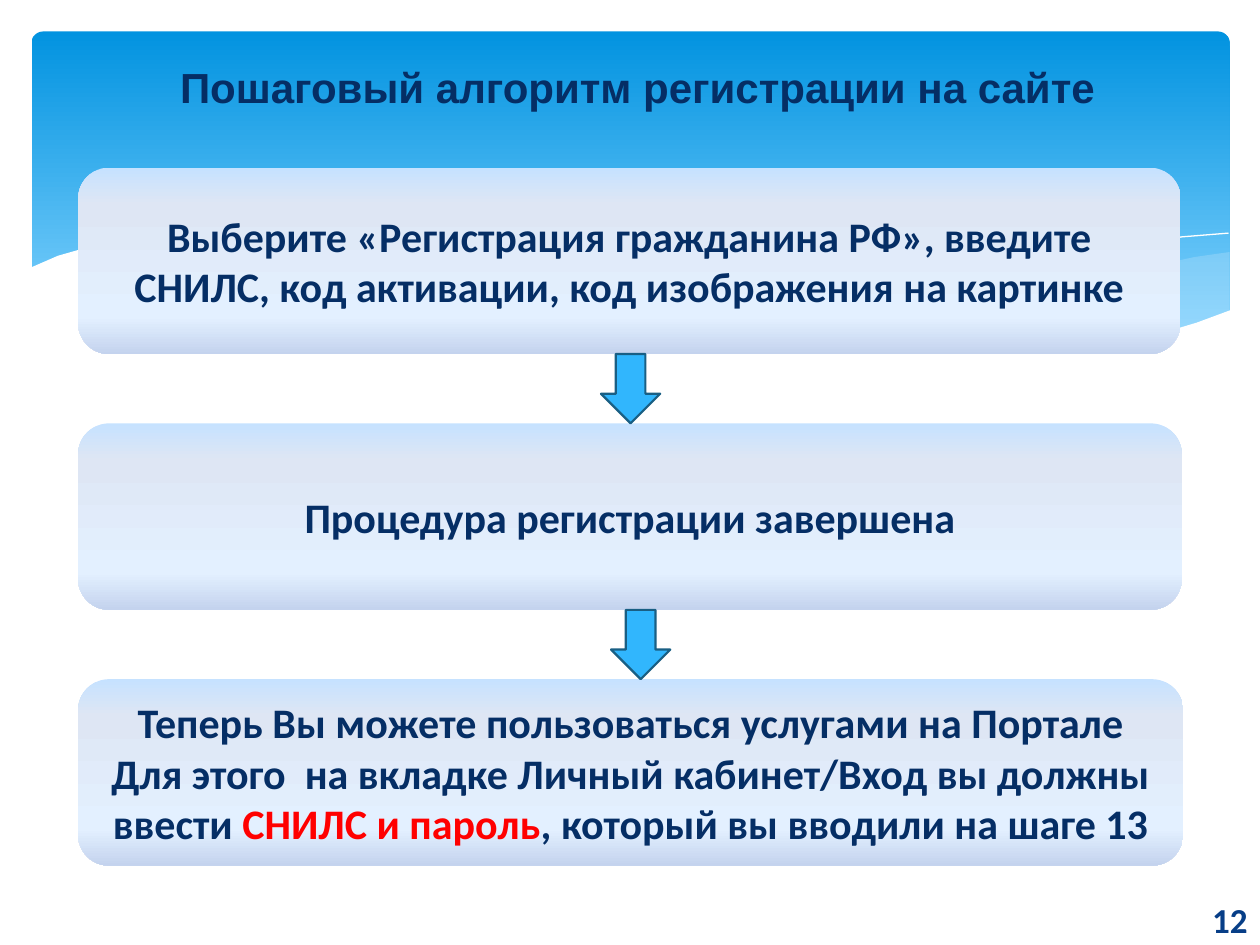
from lxml import etree
from pptx import Presentation
from pptx import util as u
from pptx.dml.color import RGBColor
from pptx.enum import shapes, text
from pptx.oxml import ns

COLORS = {
    "navy": "052E65", "blue": "073E87", "red": "FF0000", "white": "FFFFFF",
    "wave": "C6E7FC", "arrow": "31B6FD", "arrow_edge": "195F84",
}
BANNER_STOPS = [(0, "0293E0"), (90, "83D3FE")]
STEP_STOPS = [(0, "C6E2FF"), (20, "DEE6F4"), (80, "E3F0FF"), (100, "C4D3EE")]

RIGHT_WAVE = [
    (9.76, 2), (9.48, 2.04), (9.21, 2.1), (8.91, 2.16), (8.61, 2.23), (8.05, 2.37),
    (7.53, 2.48), (7.06, 2.57), (6.61, 2.65), (6.91, 2.69), (7.19, 2.72), (7.45, 2.75),
    (7.81, 2.77), (8.14, 2.78), (8.54, 2.76), (8.89, 2.72), (9.21, 2.65), (9.49, 2.57),
    (9.76, 2.47),
]
MIDDLE_WAVE = [
    (8.93, 2.73), (8.66, 2.69), (8.07, 2.6), (7.41, 2.47), (6.68, 2.31), (6.13, 2.18),
    (5.55, 2.05), (5.02, 1.96), (4.42, 1.89), (3.8, 1.85), (3.28, 1.87), (2.86, 1.91),
    (3.42, 1.99), (4.04, 2.11), (4.49, 2.22), (5.3, 2.4), (6.01, 2.55), (6.65, 2.66),
    (7.22, 2.74), (7.85, 2.78), (8.38, 2.78), (8.76, 2.75),
]
LONG_LINE = [
    (3.09, 1.95), (3.44, 1.9), (3.87, 1.87), (4.33, 1.87), (4.89, 1.9), (5.56, 1.97),
    (6.36, 2.08), (6.95, 2.19), (7.6, 2.33), (8.31, 2.51), (9.07, 2.72),
]
SHORT_LINE = [
    (6.13, 2.57), (6.72, 2.41), (7.48, 2.23), (8.06, 2.1), (8.66, 1.99), (9.1, 1.92),
    (9.38, 1.88), (9.75, 1.85),
]
WHITE_WAVE = [
    (9.77, 2.46), (9.5, 2.56), (9.2, 2.65), (8.87, 2.71), (8.5, 2.75), (8.09, 2.77),
    (7.61, 2.75), (7.08, 2.7), (6.48, 2.62), (5.79, 2.5), (5.03, 2.33), (4.47, 2.2),
    (3.91, 2.07), (3.4, 1.97), (2.92, 1.9), (2.5, 1.86), (2.11, 1.84), (1.77, 1.84),
    (1.46, 1.85), (1.19, 1.87), (0.95, 1.91), (0.67, 1.97), (0.46, 2.03), (0.23, 2.13),
    (0.23, 3.29), (9.77, 3.29),
]

STEP_LEFT, STEP_TOP, STEP_HEIGHT, STEP_PITCH = 0.62, 1.33, 1.48, 2.03
STEPS = [
    (8.75, [[("Выберите «Регистрация гражданина РФ», введите СНИЛС, "
              "код активации, код изображения на картинке", "navy")]]),
    (8.76, [[("Процедура регистрации завершена", "navy")]]),
    (8.77, [[("Теперь Вы можете пользоваться услугами на Портале", "navy")],
            [("Для этого  на вкладке Личный кабинет/Вход вы должны ввести ", "navy"),
             ("СНИЛС и пароль", "red"),
             (", который вы вводили на шаге 13", "navy")]]),
]
ARROW_LEFTS = [4.77, 4.85]


def rgb(name):
    return RGBColor.from_string(COLORS[name])


def fill_gradient(shape, stops):
    shape.fill.background()
    blank = shape.fill._xPr.find(ns.qn("a:noFill"))
    gradient = etree.Element(ns.qn("a:gradFill"), rotWithShape="1")
    stop_list = etree.SubElement(gradient, ns.qn("a:gsLst"))
    for percent, color in stops:
        stop = etree.SubElement(stop_list, ns.qn("a:gs"), pos=str(percent * 1000))
        etree.SubElement(stop, ns.qn("a:srgbClr"), val=color)
    etree.SubElement(gradient, ns.qn("a:lin"), ang="5400000", scaled="0")
    blank.getparent().replace(blank, gradient)


def add_preset(page, kind, left, top, width, height):
    shape = page.shapes.add_shape(
        kind, u.Inches(left), u.Inches(top), u.Inches(width), u.Inches(height))
    shape.shadow.inherit = False
    shape.line.fill.background()
    return shape


def add_outline(page, points, closed):
    corners = [(u.Inches(x), u.Inches(y)) for x, y in points]
    builder = page.shapes.build_freeform(*corners[0], scale=1.0)
    builder.add_line_segments(corners[1:], close=closed)
    shape = builder.convert_to_shape()
    shape.shadow.inherit = False
    return shape


def add_wave(page, points, color, opacity=100):
    shape = add_outline(page, points, True)
    shape.line.fill.background()
    shape.fill.solid()
    shape.fill.fore_color.rgb = rgb(color)
    if opacity < 100:
        tint = shape.fill._xPr.find(ns.qn("a:solidFill"))[0]
        etree.SubElement(tint, ns.qn("a:alpha"), val=str(opacity * 1000))


def add_curve(page, points):
    shape = add_outline(page, points, False)
    shape.fill.background()
    shape.line.color.rgb = rgb("white")
    shape.line.width = u.Pt(0)


def write(box, paragraphs, font, size, align, anchor):
    frame = box.text_frame
    frame.word_wrap = True
    frame.vertical_anchor = anchor
    for index, spans in enumerate(paragraphs):
        para = frame.add_paragraph() if index else frame.paragraphs[0]
        para.alignment = align
        para.font.name = font
        para.font.size = u.Pt(size)
        para.font.bold = True
        for words, color in spans:
            span = para.add_run()
            span.text = words
            span.font.color.rgb = rgb(color)


def add_label(page, left, top, width, height, words, color, font, size, align, anchor):
    box = page.shapes.add_textbox(
        u.Inches(left), u.Inches(top), u.Inches(width), u.Inches(height))
    write(box, [[(words, color)]], font, size, align, anchor)


def add_step(page, top, width, paragraphs):
    box = add_preset(page, shapes.MSO_SHAPE.ROUNDED_RECTANGLE,
                     STEP_LEFT, top, width, STEP_HEIGHT)
    fill_gradient(box, STEP_STOPS)
    write(box, paragraphs, "Calibri", 24, text.PP_ALIGN.CENTER, text.MSO_ANCHOR.MIDDLE)


def add_arrow(page, left, top):
    arrow = add_preset(page, shapes.MSO_SHAPE.DOWN_ARROW,
                       left, top, 0.47, STEP_PITCH - STEP_HEIGHT)
    arrow.fill.solid()
    arrow.fill.fore_color.rgb = rgb("arrow")
    arrow.line.color.rgb = rgb("arrow_edge")
    arrow.line.width = u.Pt(1.25)


def add_banner(page):
    banner = add_preset(page, shapes.MSO_SHAPE.ROUNDED_RECTANGLE, 0.25, 0.25, 9.51, 2.7)
    banner.adjustments[0] = 0.034
    fill_gradient(banner, BANNER_STOPS)
    add_wave(page, RIGHT_WAVE, "wave", 29)
    add_wave(page, MIDDLE_WAVE, "wave", 40)
    add_curve(page, LONG_LINE)
    add_curve(page, SHORT_LINE)
    add_wave(page, WHITE_WAVE, "white")


def main():
    deck = Presentation()
    deck.slide_width, deck.slide_height = u.Inches(10), u.Inches(7.5)
    page = deck.slides.add_slide(deck.slide_layouts[6])
    add_banner(page)
    add_label(page, 0.12, 0.05, 9.88, 0.89, "Пошаговый алгоритм регистрации на сайте",
              "navy", "Arial", 24, text.PP_ALIGN.CENTER, text.MSO_ANCHOR.BOTTOM)
    for index, (width, paragraphs) in enumerate(STEPS):
        add_step(page, STEP_TOP + index * STEP_PITCH, width, paragraphs)
    for index, left in enumerate(ARROW_LEFTS):
        add_arrow(page, left, STEP_TOP + STEP_HEIGHT + index * STEP_PITCH)
    add_label(page, 8.73, 7.1, 1.27, 0.4, "12", "blue", "Calibri", 20,
              text.PP_ALIGN.RIGHT, text.MSO_ANCHOR.MIDDLE)
    deck.save("out.pptx")


if __name__ == "__main__":
    main()
